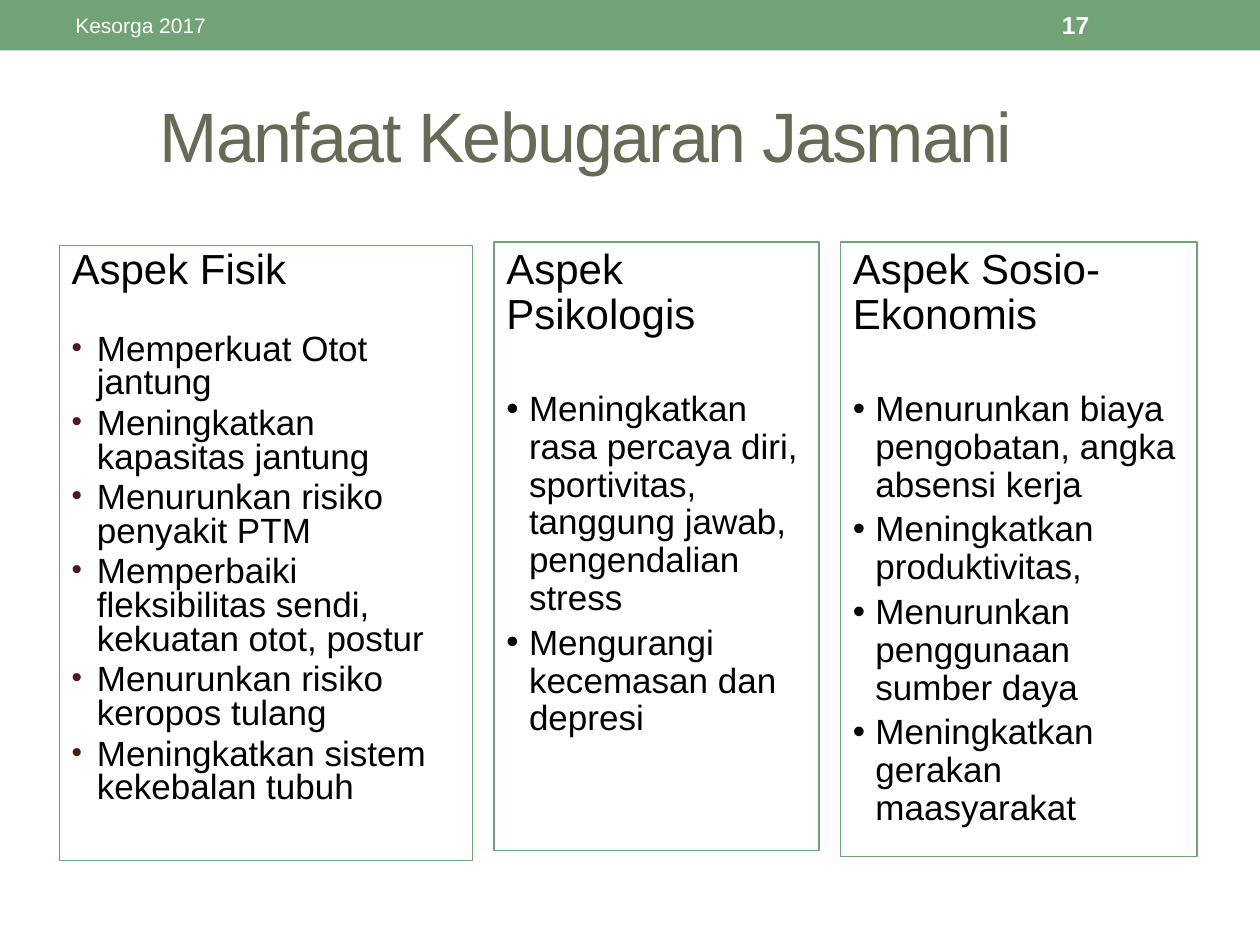
from pptx import Presentation
from pptx.dml.color import RGBColor
from pptx.enum.shapes import MSO_SHAPE
from pptx.enum.text import MSO_ANCHOR, PP_ALIGN
from pptx.oxml.xmlchemy import OxmlElement
from pptx.util import Inches, Pt

RECTANGLE = MSO_SHAPE.RECTANGLE
TOP, MIDDLE = MSO_ANCHOR.TOP, MSO_ANCHOR.MIDDLE
LEFT = PP_ALIGN.LEFT

GREEN, OLIVE, MAROON = "72A376", "676A55", "4F1919"
BLACK, WHITE = "000000", "FFFFFF"
FONT = "Arial"
ITEM_GAP = 4

# box, line spacing, indent, gap above the list, bullet colour and size, heading, items
ASPECTS = [
    ((0.47, 1.95, 3.28, 4.88), 0.8, 0.2, 24, MAROON, 85, "Aspek Fisik", [
        "Memperkuat Otot jantung",
        "Meningkatkan kapasitas jantung",
        "Menurunkan risiko penyakit PTM",
        "Memperbaiki fleksibilitas sendi, kekuatan otot, postur",
        "Menurunkan risiko keropos tulang",
        "Meningkatkan sistem kekebalan tubuh",
    ]),
    ((3.92, 1.92, 2.58, 4.83), 0.9, 0.18, 30, BLACK, 100, "Aspek Psikologis", [
        "Meningkatkan rasa percaya diri, sportivitas, tanggung jawab, "
        "pengendalian stress",
        "Mengurangi kecemasan dan depresi",
    ]),
    ((6.67, 1.92, 2.83, 4.88), 0.9, 0.18, 30, BLACK, 100, "Aspek Sosio-Ekonomis", [
        "Menurunkan biaya pengobatan, angka absensi kerja",
        "Meningkatkan produktivitas,",
        "Menurunkan penggunaan sumber daya",
        "Meningkatkan gerakan maasyarakat",
    ]),
]


def rgb(value):
    return RGBColor.from_string(value)


def inches(box):
    return [Inches(length) for length in box]


def format_text(para, size, color, bold=False):
    for span in para.runs:
        span.font.name = FONT
        span.font.size = Pt(size)
        span.font.bold = bold
        span.font.color.rgb = rgb(color)


def add_rectangle(page, box, fill=None, line=None):
    shape = page.shapes.add_shape(RECTANGLE, *inches(box))
    shape.shadow.inherit = False
    if fill:
        shape.fill.solid()
        shape.fill.fore_color.rgb = rgb(fill)
    else:
        shape.fill.background()
    if line:
        shape.line.color.rgb = rgb(line)
        shape.line.width = Pt(0.75)
    else:
        shape.line.fill.background()
    return shape


def add_label(page, box, text, size, color, bold=False):
    frame = page.shapes.add_textbox(*inches(box)).text_frame
    frame.word_wrap = True
    frame.vertical_anchor = MIDDLE
    frame.text = text
    para = frame.paragraphs[0]
    format_text(para, size, color, bold)
    return para


def add_bullet(para, indent, color, percent):
    properties = para._p.get_or_add_pPr()
    properties.set("marL", str(Inches(indent)))
    properties.set("indent", str(-Inches(indent)))
    bullet_color = OxmlElement("a:buClr")
    shade = OxmlElement("a:srgbClr")
    shade.set("val", color)
    bullet_color.append(shade)
    bullet_size = OxmlElement("a:buSzPct")
    bullet_size.set("val", str(percent * 1000))
    bullet_font = OxmlElement("a:buFont")
    bullet_font.set("typeface", FONT)
    bullet = OxmlElement("a:buChar")
    bullet.set("char", "•")
    for element in (bullet_color, bullet_size, bullet_font, bullet):
        properties.append(element)


def add_header(page, box):
    left, top, width, height = box
    add_rectangle(page, box, fill=GREEN)
    label_top, label_height = top + 0.02, height - 0.04
    add_label(page, (left + 0.5, label_top, 3.17, label_height),
              "Kesorga 2017", 12, WHITE)
    add_label(page, (left + width - 1.67, label_top, 1.17, label_height),
              "17", 14, WHITE, bold=True)


def add_title(page, box):
    para = add_label(page, box, "Manfaat Kebugaran Jasmani", 40, OLIVE)
    for span in para.runs:
        span.font._element.set("spc", "-100")


def add_aspect(page, box, spacing, indent, list_gap, bullet_color, bullet_size,
               heading, items):
    frame = add_rectangle(page, box, line=GREEN).text_frame
    frame.word_wrap = True
    frame.vertical_anchor = TOP
    frame.text = "\n".join([heading, *items])
    for index, para in enumerate(frame.paragraphs):
        para.alignment = LEFT
        para.line_spacing = spacing
        para.space_before = Pt(list_gap if index == 1 else ITEM_GAP)
        format_text(para, 20 if index else 24, BLACK)
        if index:
            add_bullet(para, indent, bullet_color, bullet_size)


def main():
    deck = Presentation()
    deck.slide_width, deck.slide_height = Inches(10), Inches(7.5)
    page = deck.slides.add_slide(deck.slide_layouts[6])
    add_header(page, (0, 0, 10, 0.4))
    add_title(page, (1.17, 0.39, 7.81, 1.36))
    for aspect in ASPECTS:
        add_aspect(page, *aspect)
    deck.save("out.pptx")


if __name__ == "__main__":
    main()
